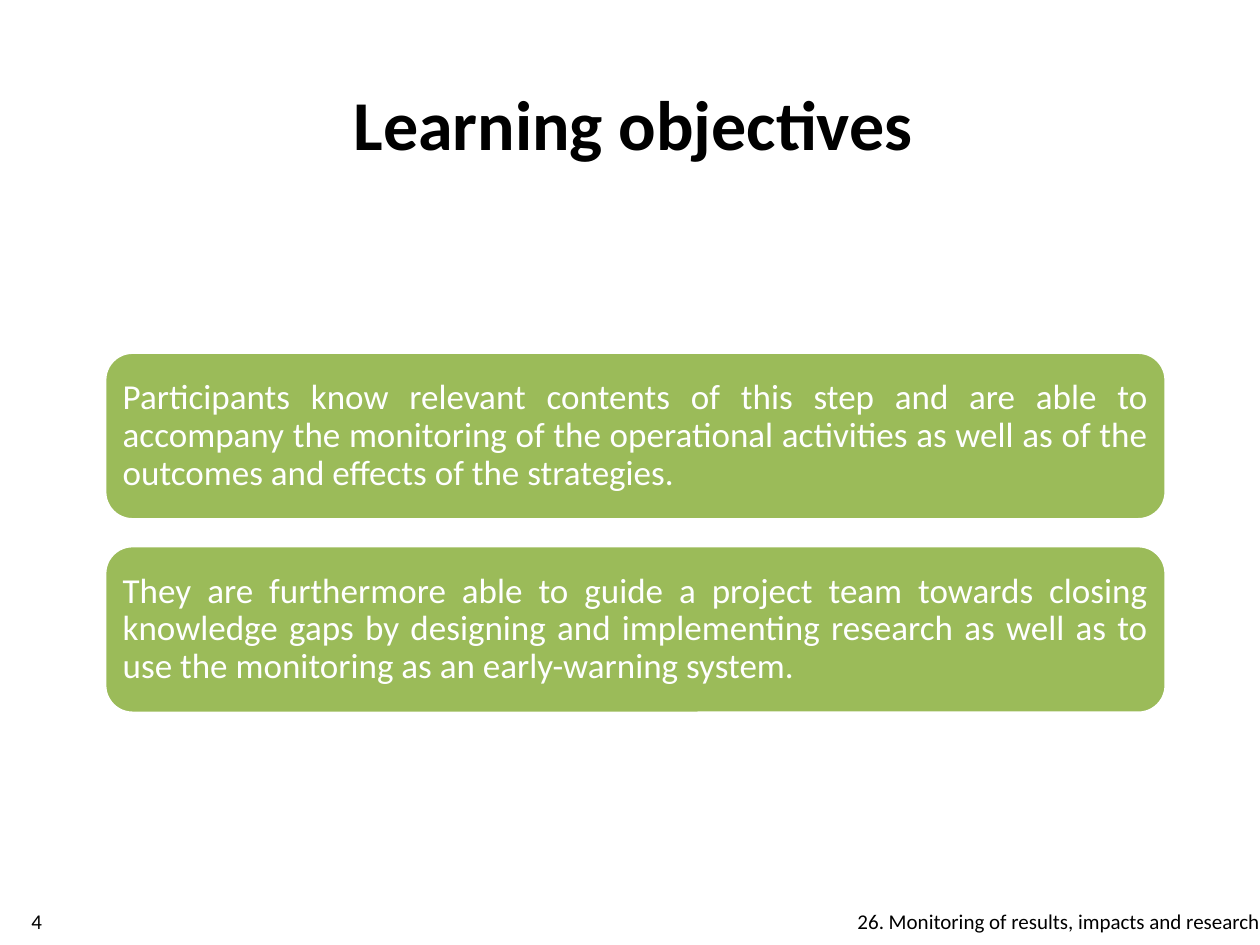
"""Build the learning objectives slide."""
from dataclasses import dataclass

from pptx import Presentation
from pptx.dml.color import RGBColor
from pptx.enum import shapes, text
from pptx.util import Cm, Pt

TITLE = "Learning objectives"
OBJECTIVES = [
    "Participants know relevant contents of this step and are able to accompany "
    "the monitoring of the operational activities as well as of the outcomes and "
    "effects of the strategies.",
    "They are furthermore able to guide a project team towards closing knowledge "
    "gaps by designing and implementing research as well as to use the monitoring "
    "as an early-warning system.",
]
FOOTER = "26. Monitoring of results, impacts and research"
PAGE_NUMBER = "4"


@dataclass(frozen=True)
class Theme:
    font: str = "Calibri"
    ink: RGBColor = RGBColor(0, 0, 0)
    paper: RGBColor = RGBColor(255, 255, 255)
    panel: RGBColor = RGBColor(0x9B, 0xBB, 0x59)
    title_size: int = 40
    body_size: int = 20
    footer_size: int = 12


THEME = Theme()
ALIGN = text.PP_ALIGN
PAGE_WIDTH, PAGE_HEIGHT = 25.4, 19.05
PANEL_LEFT, PANEL_TOP, PANEL_WIDTH, PANEL_HEIGHT = 2.11, 7.1, 21.4, 3.38
PANEL_PITCH = 3.9
FOOTER_TOP, FOOTER_HEIGHT, FOOTER_WIDTH = 18.09, 0.96, 14.9


def write(box, words, *, size, align, color=THEME.ink, bold=False,
          inset=0.25, spacing=1.0):
    frame = box.text_frame
    frame.word_wrap = True
    frame.vertical_anchor = text.MSO_ANCHOR.MIDDLE
    frame.margin_left = frame.margin_right = Cm(inset)
    frame.margin_top = frame.margin_bottom = Cm(0.13)
    para = frame.paragraphs[0]
    para.alignment = align
    para.line_spacing = spacing
    span = para.add_run()
    span.text = words
    span.font.name = THEME.font
    span.font.size = Pt(size)
    span.font.bold = bold
    span.font.color.rgb = color


def add_text(page, words, left, top, width, height, **style):
    box = page.shapes.add_textbox(Cm(left), Cm(top), Cm(width), Cm(height))
    write(box, words, **style)


def add_panel(page, words, top):
    panel = page.shapes.add_shape(
        shapes.MSO_SHAPE.ROUNDED_RECTANGLE,
        Cm(PANEL_LEFT), Cm(top), Cm(PANEL_WIDTH), Cm(PANEL_HEIGHT))
    panel.shadow.inherit = False
    panel.fill.solid()
    panel.fill.fore_color.rgb = THEME.panel
    panel.line.color.rgb = THEME.paper
    panel.line.width = Pt(2)
    # The rounded shape adds its own text margin to the inset.
    write(panel, words, size=THEME.body_size, align=ALIGN.JUSTIFY,
          color=THEME.paper, inset=0.2, spacing=0.9)


def main():
    deck = Presentation()
    deck.slide_width, deck.slide_height = Cm(PAGE_WIDTH), Cm(PAGE_HEIGHT)
    page = deck.slides.add_slide(deck.slide_layouts[6])
    add_text(page, TITLE, 3.61, 0.97, 18.31, 3,
             size=THEME.title_size, align=ALIGN.CENTER, bold=True)
    for index, objective in enumerate(OBJECTIVES):
        add_panel(page, objective, PANEL_TOP + index * PANEL_PITCH)
    add_text(page, FOOTER, PAGE_WIDTH - FOOTER_WIDTH, FOOTER_TOP,
             FOOTER_WIDTH, FOOTER_HEIGHT,
             size=THEME.footer_size, align=ALIGN.RIGHT, inset=0)
    add_text(page, PAGE_NUMBER, 0, FOOTER_TOP, 1.48, FOOTER_HEIGHT,
             size=THEME.footer_size, align=ALIGN.CENTER)
    deck.save("out.pptx")


if __name__ == "__main__":
    main()
